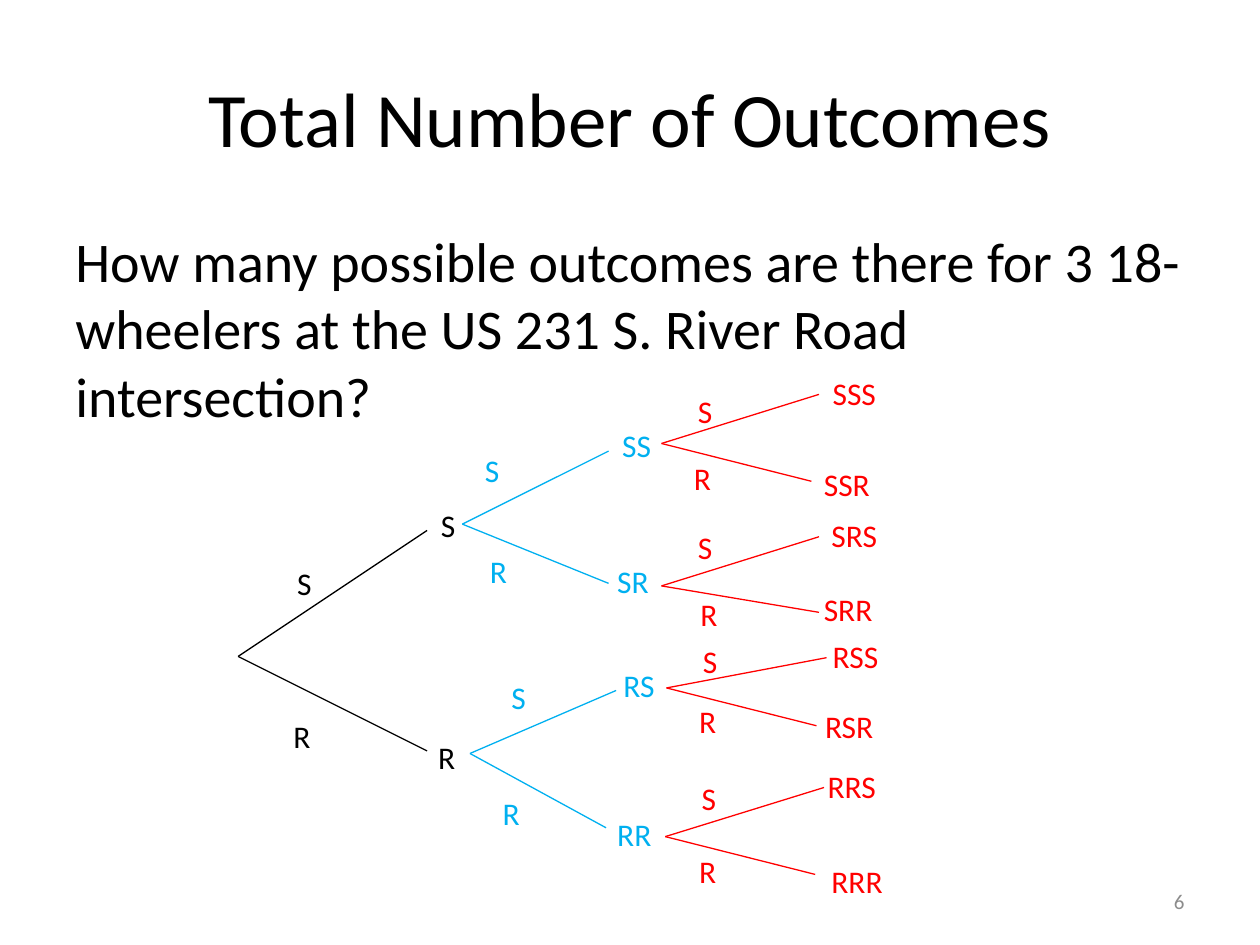
import pptx
import pptx.util
import pptx.dml.color
import pptx.enum.shapes
import pptx.enum.text
import pptx.oxml.ns
import lxml.etree

TITLE = "Total Number of Outcomes"
ASK = ("How many possible outcomes are there for 3 18-wheelers "
       "at the US 231 S. River Road intersection?")
PAGE = "6"

# path: (branch start, branch end, step label at, outcome label at)
TREE = {
    "S": ((189, 521), (339, 421), (226, 443), (340, 397)),
    "R": ((189, 521), (339, 596), (223, 564), (338, 581)),
    "SS": ((367, 416), (483, 358), (375, 353), (484, 333)),
    "SR": ((367, 416), (483, 463), (379, 433), (480, 441)),
    "RS": ((373, 598), (489, 548), (396, 533), (485, 524)),
    "RR": ((373, 598), (481, 657), (389, 625), (480, 642)),
    "SSS": ((525, 352), (650, 313), (544, 306), (651, 292)),
    "SSR": ((525, 352), (644, 382), (541, 359), (644, 364)),
    "SRS": ((525, 465), (650, 426), (544, 414), (650, 405)),
    "SRR": ((525, 465), (650, 486), (546, 467), (644, 463)),
    "RSS": ((529, 546), (656, 522), (548, 505), (651, 501)),
    "RSR": ((529, 546), (648, 576), (545, 552), (645, 556)),
    "RRS": ((528, 664), (654, 625), (547, 613), (647, 604)),
    "RRR": ((528, 664), (647, 694), (545, 671), (650, 679)),
}

THEME = {
    "font": "Calibri", "ink": "000000", "mute": "8C8C8C",
    "level": ("000000", "00B0F0", "FF0000"),
    "title": 44, "body": 32, "label": 18, "page": 12, "line": 0.75,
}
WIDE = {"S": 12, "R": 14}
PAD = 20
TALL = 40
PX = 9144

ALIGN = pptx.enum.text.PP_ALIGN
ANCHOR = pptx.enum.text.MSO_ANCHOR
FIT = pptx.enum.text.MSO_AUTO_SIZE


def emu(*nums):
    return [pptx.util.Emu(n * PX) for n in nums]


def tint(code):
    return pptx.dml.color.RGBColor.from_string(code)


def write(box, text, size, hue, align=ALIGN.LEFT, anchor=ANCHOR.TOP, wrap=True):
    frame = box.text_frame
    frame.text = text
    frame.word_wrap = wrap
    frame.auto_size = FIT.NONE if wrap else FIT.SHAPE_TO_FIT_TEXT
    frame.vertical_anchor = anchor
    para = frame.paragraphs[0]
    para.alignment = align
    font = para.runs[0].font
    font.name, font.size = THEME["font"], pptx.util.Pt(size)
    font.color.rgb = tint(hue)


def label(slide, text, spot, hue):
    width = PAD + sum(WIDE[c] for c in text)
    box = slide.shapes.add_textbox(*emu(*spot, width, TALL))
    write(box, text, THEME["label"], hue, wrap=False)


def branch(slide, start, end, hue):
    kind = pptx.enum.shapes.MSO_CONNECTOR.STRAIGHT
    line = slide.shapes.add_connector(kind, *emu(*start, *end))
    line.line.color.rgb = tint(hue)
    line.line.width = pptx.util.Pt(THEME["line"])
    lxml.etree.SubElement(line._element.spPr, pptx.oxml.ns.qn("a:effectLst"))


def main():
    deck = pptx.Presentation()
    deck.slide_width, deck.slide_height = emu(1000, 750)
    slide = deck.slides.add_slide(deck.slide_layouts[5])

    head = slide.shapes.title
    head.left, head.top, head.width, head.height = emu(50, 30, 900, 125)
    write(head, TITLE, THEME["title"], THEME["ink"], ALIGN.CENTER, ANCHOR.MIDDLE)

    body = slide.shapes.add_textbox(*emu(50, 175, 900, 495))
    write(body, ASK, THEME["body"], THEME["ink"])

    page = slide.shapes.add_textbox(*emu(717, 695, 233, 40))
    write(page, PAGE, THEME["page"], THEME["mute"], ALIGN.RIGHT, ANCHOR.MIDDLE)

    for name, (start, end, step, spot) in TREE.items():
        hue = THEME["level"][len(name) - 1]
        branch(slide, start, end, hue)
        label(slide, name[-1], step, hue)
        label(slide, name, spot, hue)

    deck.save("out.pptx")


if __name__ == "__main__":
    main()
